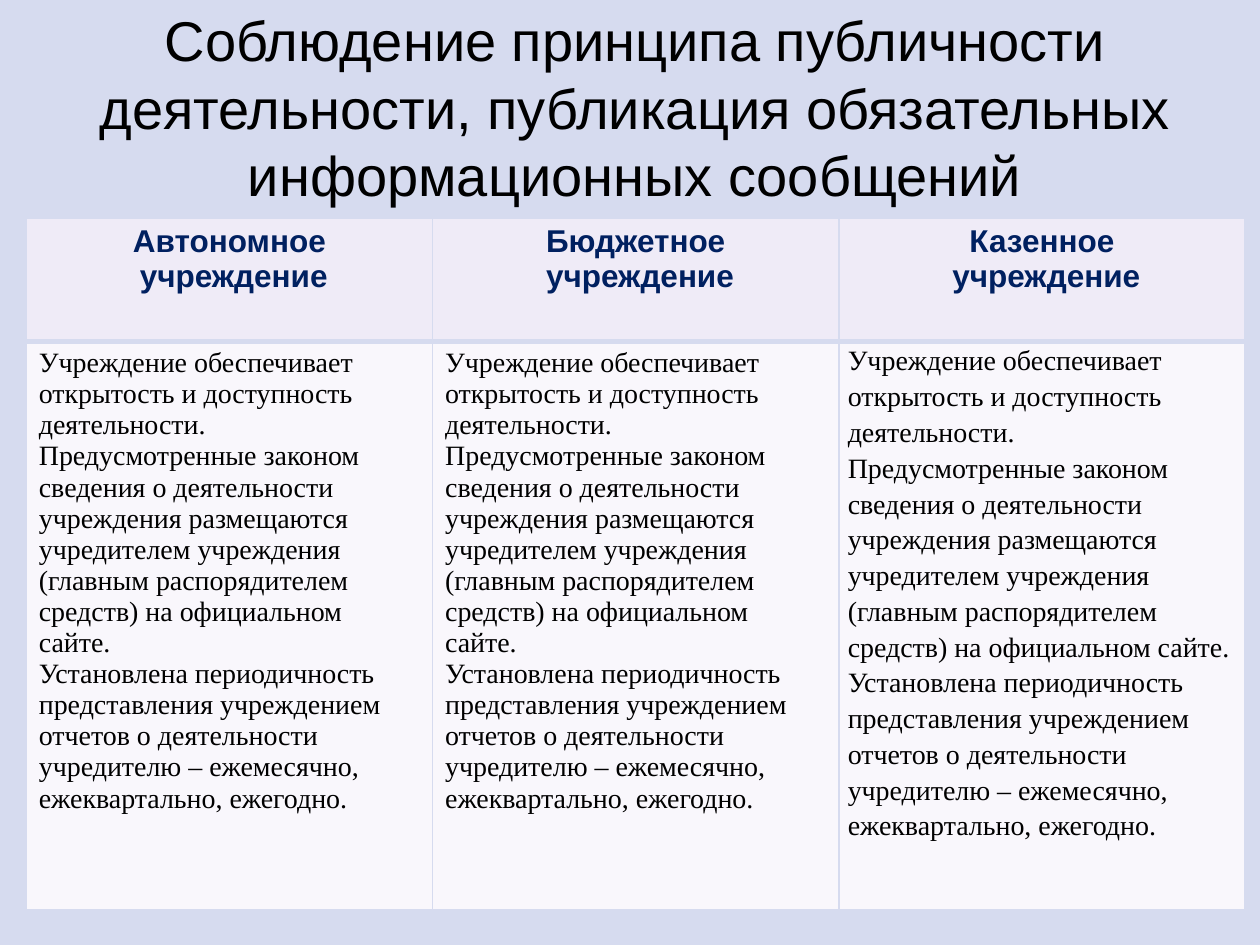
from lxml import etree
from pptx import Presentation
from pptx.dml.color import RGBColor
from pptx.enum import text
from pptx.oxml.ns import qn
from pptx.util import Cm, Pt

BACKGROUND = RGBColor(0xD6, 0xDB, 0xEF)
HEADER_FILL = RGBColor(0xEF, 0xEB, 0xF7)
BODY_FILL = RGBColor(0xF9, 0xF7, 0xFC)
NAVY = RGBColor(0x00, 0x20, 0x60)
BLACK = RGBColor(0x00, 0x00, 0x00)

TITLE = ("Соблюдение принципа публичности деятельности, "
         "публикация обязательных информационных сообщений")
HEADERS = ["Автономное", "Бюджетное", "Казенное"]
BODY = [
    "Учреждение обеспечивает открытость и доступность деятельности. "
    "Предусмотренные законом сведения о деятельности учреждения размещаются "
    "учредителем учреждения (главным распорядителем средств) на официальном сайте.",
    "Установлена периодичность представления учреждением отчетов о деятельности "
    "учредителю – ежемесячно, ежеквартально, ежегодно.",
]


def set_borders(cell, **widths):
    """Draw the cell's edges in the background colour; widths are in points."""
    tcPr = cell._tc.get_or_add_tcPr()
    for i, side in enumerate("LRTB"):
        ln = etree.Element(qn(f"a:ln{side}"), w=str(Pt(widths.get(side, 1))))
        fill = etree.SubElement(ln, qn("a:solidFill"))
        etree.SubElement(fill, qn("a:srgbClr"), val=str(BACKGROUND))
        tcPr.insert(i, ln)


def write(tf, lines, size, name, color, bold=False, align=None, spacing=None):
    tf.text = "\n".join(lines)
    for p in tf.paragraphs:
        p.alignment = align
        p.line_spacing = spacing
        p.font.size = Pt(size)
        p.font.name = name
        p.font.bold = bold
        p.font.color.rgb = color


prs = Presentation()
prs.slide_width, prs.slide_height = Cm(25.4), Cm(19.05)
s = prs.slides.add_slide(prs.slide_layouts[6])
s.background.fill.solid()
s.background.fill.fore_color.rgb = BACKGROUND

title = s.shapes.add_textbox(Cm(0.51), Cm(0.36), Cm(24.59), Cm(3.58))
tf = title.text_frame
tf.word_wrap = True
tf.vertical_anchor = text.MSO_ANCHOR.MIDDLE
write(tf, [TITLE], 32, "Arial", BLACK, align=text.PP_ALIGN.CENTER)

table = s.shapes.add_table(2, 3, Cm(0.53), Cm(4.39), Cm(24.57), Cm(13.95)).table
table.rows[0].height = Cm(2.49)
table.rows[1].height = Cm(11.46)

for col, kind in enumerate(HEADERS):
    table.columns[col].width = Cm(8.19)

    header = table.cell(0, col)
    header.fill.solid()
    header.fill.fore_color.rgb = HEADER_FILL
    set_borders(header, B=3)
    write(header.text_frame, [kind, " учреждение"], 18, "Arial", NAVY,
          bold=True, align=text.PP_ALIGN.CENTER)

    body = table.cell(1, col)
    body.fill.solid()
    body.fill.fore_color.rgb = BODY_FILL
    set_borders(body, T=3)
    is_last = col == len(HEADERS) - 1
    write(body.text_frame, BODY, 16, "Times New Roman", BLACK,
          spacing=1.15 if is_last else None)
    if is_last:
        body.margin_left = body.margin_right = Cm(0.18)
        body.margin_top = body.margin_bottom = 0

prs.save("out.pptx")
